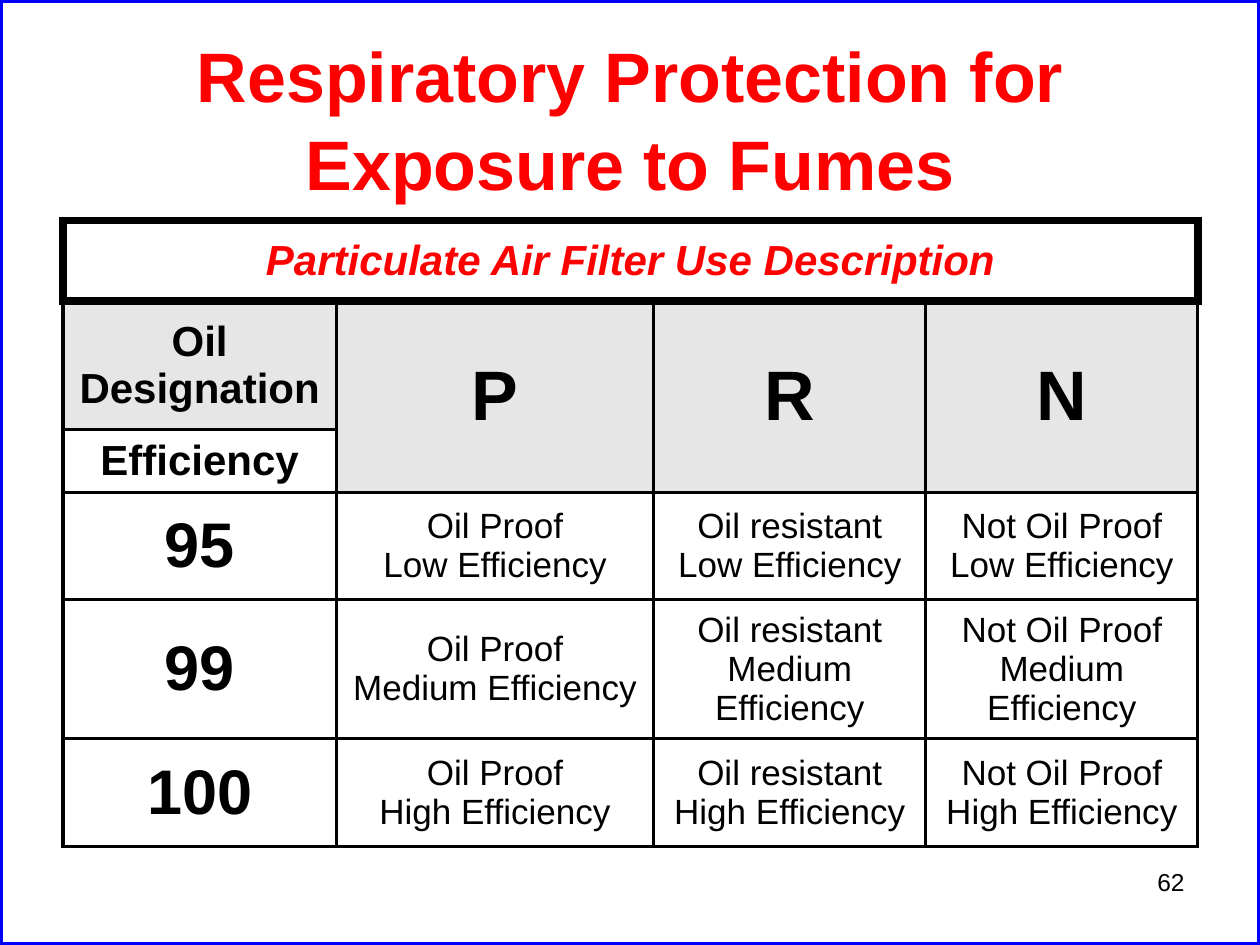
import pptx
import pptx.dml.color
import pptx.enum.shapes
import pptx.enum.text
import pptx.oxml
import pptx.oxml.ns
import pptx.util

Pt = pptx.util.Pt
ALIGN = pptx.enum.text.PP_ALIGN
ANCHOR = pptx.enum.text.MSO_ANCHOR

COLORS = {"white": "FFFFFF", "black": "000000", "red": "FF0000",
          "blue": "0000FF", "gray": "E6E6E6"}

# Text formats
TITLE = {"size": Pt(40), "bold": True, "color": "red"}
CAPTION = {"size": Pt(24), "bold": True, "italic": True, "color": "red"}
LABEL = {"size": Pt(24), "bold": True, "color": "black"}
LETTER = {"size": Pt(40), "bold": True, "color": "black"}
NUMBER = {"size": Pt(36), "bold": True, "color": "black"}
BODY = {"size": Pt(20), "bold": False, "color": "black"}
PAGE = {"size": Pt(14), "color": "black"}

# Filter table content
COLUMN_WIDTHS = [156.2, 181.4, 155.5, 155.5]
ROW_HEIGHTS = [46, 73.4, 36, 61.2, 79.2, 61.9]
DESIGNATIONS = {"P": "Oil Proof", "R": "Oil resistant", "N": "Not Oil Proof"}
EFFICIENCIES = {"95": "Low", "99": "Medium", "100": "High"}


def rgb(name):
    return pptx.dml.color.RGBColor.from_string(COLORS[name])


def write(frame, lines, style, align=ALIGN.CENTER, spacing=None):
    """Put each line in its own paragraph."""
    frame.word_wrap = True
    for index, line in enumerate(lines):
        paragraph = frame.paragraphs[0] if index == 0 else frame.add_paragraph()
        paragraph.alignment = align
        paragraph.line_spacing = spacing
        font = paragraph.add_run().font
        paragraph.runs[0].text = line
        font.name = "Arial"
        for key, value in style.items():
            if key == "color":
                font.color.rgb = rgb(value)
            else:
                setattr(font, key, value)


def set_borders(cell, widths):
    """Draw the left, right, top and bottom borders of a cell."""
    properties = cell._tc.get_or_add_tcPr()
    for index, (side, width) in enumerate(zip("LRTB", widths)):
        properties.insert(index, pptx.oxml.parse_xml(
            f'<a:ln{side} {pptx.oxml.ns.nsdecls("a")} w="{Pt(width)}">'
            f'<a:solidFill><a:srgbClr val="{COLORS["black"]}"/></a:solidFill>'
            f'</a:ln{side}>'))


def fill_cell(cell, lines, style, fill="white"):
    write(cell.text_frame, lines, style)
    cell.vertical_anchor = ANCHOR.MIDDLE
    cell.fill.solid()
    cell.fill.fore_color.rgb = rgb(fill)


def add_frame(slide, left, top, width, height):
    shape = slide.shapes.add_shape(pptx.enum.shapes.MSO_SHAPE.RECTANGLE,
                                   Pt(left), Pt(top), Pt(width), Pt(height))
    shape.shadow.inherit = False
    shape.fill.background()
    shape.line.color.rgb = rgb("blue")
    shape.line.width = Pt(3)


def add_text(slide, left, top, width, height, text, style,
             align=ALIGN.CENTER, anchor=ANCHOR.TOP, spacing=None):
    box = slide.shapes.add_textbox(Pt(left), Pt(top), Pt(width), Pt(height))
    box.text_frame.vertical_anchor = anchor
    write(box.text_frame, [text], style, align, spacing)


def add_filter_table(slide, left, top, width, height):
    table = slide.shapes.add_table(
        len(ROW_HEIGHTS), len(COLUMN_WIDTHS),
        Pt(left), Pt(top), Pt(width), Pt(height)).table
    for column, size in zip(table.columns, COLUMN_WIDTHS):
        column.width = Pt(size)
    for row, size in zip(table.rows, ROW_HEIGHTS):
        row.height = Pt(size)

    # Heavy border around the caption row, thin grid below it
    for row_index, row in enumerate(table.rows):
        for cell in row.cells:
            set_borders(cell, {0: (5, 5, 5, 5), 1: (2, 2, 5, 2)}.get(row_index, (2, 2, 2, 2)))

    # Heading rows
    table.cell(0, 0).merge(table.cell(0, len(COLUMN_WIDTHS) - 1))
    fill_cell(table.cell(0, 0), ["Particulate Air Filter Use Description"], CAPTION)
    fill_cell(table.cell(1, 0), ["Oil", "Designation"], LABEL, "gray")
    fill_cell(table.cell(2, 0), ["Efficiency"], LABEL)
    for column, letter in enumerate(DESIGNATIONS, 1):
        table.cell(1, column).merge(table.cell(2, column))
        fill_cell(table.cell(1, column), [letter], LETTER, "gray")

    # One row for each efficiency
    for row, (number, level) in enumerate(EFFICIENCIES.items(), 3):
        fill_cell(table.cell(row, 0), [number], NUMBER)
        for column, (letter, oil) in enumerate(DESIGNATIONS.items(), 1):
            split = level == "Medium" and letter != "P"
            rating = [level, "Efficiency"] if split else [f"{level} Efficiency"]
            fill_cell(table.cell(row, column), [oil, *rating], BODY)


def main():
    presentation = pptx.Presentation()
    presentation.slide_width, presentation.slide_height = Pt(720), Pt(540)
    slide = presentation.slides.add_slide(presentation.slide_layouts[6])
    slide.background.fill.solid()
    slide.background.fill.fore_color.rgb = rgb("white")

    add_frame(slide, 0, 0, 720, 540)
    add_text(slide, 516, 492, 168, 37, "62", PAGE, ALIGN.RIGHT)
    add_text(slide, 36, 21.6, 648, 90, "Respiratory Protection for Exposure to Fumes",
             TITLE, anchor=ANCHOR.MIDDLE, spacing=1.05)
    add_filter_table(slide, 36, 126, 648, 358)
    presentation.save("out.pptx")


if __name__ == "__main__":
    main()
